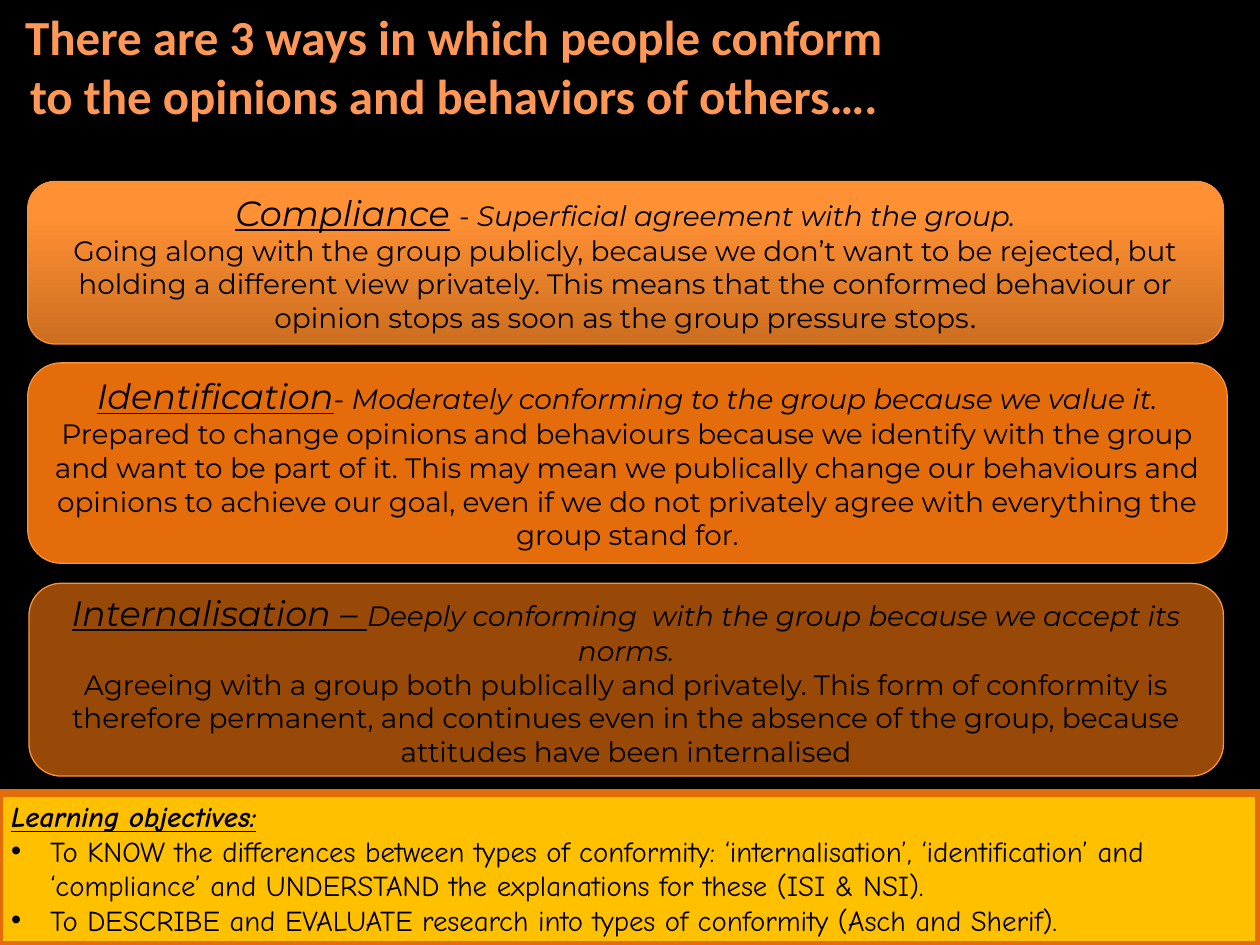
from lxml.etree import SubElement
from pptx import Presentation
from pptx.dml.color import RGBColor
from pptx.enum.shapes import MSO_SHAPE as Shape
from pptx.enum.text import MSO_ANCHOR as Anchor, MSO_AUTO_SIZE as AutoSize, PP_ALIGN as Align
from pptx.oxml.ns import qn
from pptx.util import Inches, Pt

BLACK = RGBColor(0x00, 0x00, 0x00)
TITLE_ORANGE = RGBColor(0xFF, 0x98, 0x56)
EDGE_ORANGE = RGBColor(0xF6, 0x92, 0x40)
LIGHT_ORANGE = RGBColor(0xFF, 0x90, 0x34)
SHADED_ORANGE = RGBColor(0xCC, 0x6E, 0x20)
ORANGE = RGBColor(0xE4, 0x6C, 0x0A)
BROWN = RGBColor(0x98, 0x48, 0x07)
YELLOW = RGBColor(0xFF, 0xC0, 0x00)

CONFORMITY_TYPES = [
    ((0.22, 1.44, 9.49, 1.29), (SHADED_ORANGE, LIGHT_ORANGE),
     [("Compliance", {"size": 20, "italic": True, "underline": True}),
      (" ", {"size": 20}),
      ("- ", {}),
      ("Superficial agreement with the group.", {"italic": True})],
     [("Going along with the group publicly, because we don’t want to be rejected, "
       "but holding a different view privately. This means that the conformed "
       "behaviour or opinion stops as soon as the group pressure stops", {}),
      (".", {"font": "Calibri"})]),
    ((0.22, 2.88, 9.52, 1.59), (ORANGE,),
     [("Identification", {"size": 20, "italic": True, "underline": True}),
      ("- ", {}),
      ("Moderately conforming to the group because we value it.", {"italic": True})],
     [("Prepared to change opinions and behaviours because we identify with the "
       "group and want to be part of it. This may mean we publically change our "
       "behaviours and opinions to achieve our goal, even if we do not privately "
       "agree with everything the group stand for.", {})]),
    ((0.23, 4.63, 9.48, 1.53), (BROWN,),
     [("Internalisation – ", {"size": 20, "italic": True, "underline": True}),
      ("Deeply conforming  with the group because we accept its norms.",
       {"italic": True})],
     [("Agreeing with a group both publically and privately. This form of "
       "conformity is therefore permanent, and continues even in the absence of "
       "the group, because attitudes have been internalised", {})]),
]

OBJECTIVES = [
    "To KNOW the differences between types of conformity: ‘internalisation’, "
    "‘identification’ and ‘compliance’ and UNDERSTAND the explanations for these "
    "(ISI & NSI).",
    "To DESCRIBE and EVALUATE research into types of conformity (Asch and Sherif).",
]


def add_text(paragraph, text, size=16, font="Montserrat", color=BLACK,
             bold=False, italic=False, underline=False):
    run = paragraph.add_run()
    run.text = text
    run.font.size = Pt(size)
    run.font.name = font
    run.font.color.rgb = color
    run.font.bold = bold
    run.font.italic = italic
    run.font.underline = underline


def add_bullet(paragraph, indent):
    properties = paragraph._p.get_or_add_pPr()
    properties.set("marL", str(indent))
    properties.set("indent", str(-indent))
    SubElement(properties, qn("a:buFont")).set("typeface", "Arial")
    SubElement(properties, qn("a:buChar")).set("char", "•")


def add_panel(slide, kind, box, fill_colors, line_color, line_width, anchor):
    shape = slide.shapes.add_shape(kind, *map(Inches, box))
    shape.shadow.inherit = False
    if len(fill_colors) == 1:
        shape.fill.solid()
        shape.fill.fore_color.rgb = fill_colors[0]
    else:
        shape.fill.gradient()
        shape.fill.gradient_angle = 90
        for stop, color, position in zip(shape.fill.gradient_stops, fill_colors, (0, 0.8)):
            stop.color.rgb = color
            stop.position = position
    shape.line.color.rgb = line_color
    shape.line.width = Pt(line_width)
    shape.text_frame.word_wrap = True
    shape.text_frame.vertical_anchor = anchor
    return shape.text_frame


def place_title(slide, box):
    title = slide.shapes.title
    title.left, title.top, title.width, title.height = map(Inches, box)
    frame = title.text_frame
    frame.word_wrap = True
    frame.auto_size = AutoSize.NONE
    frame.vertical_anchor = Anchor.TOP
    paragraph = frame.paragraphs[0]
    paragraph.alignment = Align.CENTER
    add_text(paragraph,
             "There are 3 ways in which people conform to the opinions and "
             "behaviors of others….",
             size=28, font="Calibri", color=TITLE_ORANGE, bold=True)


def add_conformity_type(slide, box, fill_colors, heading, description):
    frame = add_panel(slide, Shape.ROUNDED_RECTANGLE, box, fill_colors,
                      EDGE_ORANGE, 0.75, Anchor.MIDDLE)
    for paragraph, runs in zip((frame.paragraphs[0], frame.add_paragraph()),
                               (heading, description)):
        paragraph.alignment = Align.CENTER
        for text, style in runs:
            add_text(paragraph, text, **style)


def add_objectives(slide, box):
    frame = add_panel(slide, Shape.RECTANGLE, box, (YELLOW,), ORANGE, 4.5, Anchor.TOP)
    heading = frame.paragraphs[0]
    heading.alignment = Align.LEFT
    add_text(heading, "Learning objectives:", size=16.5, font="Comic Neue",
             bold=True, italic=True, underline=True)
    for objective in OBJECTIVES:
        paragraph = frame.add_paragraph()
        paragraph.alignment = Align.LEFT
        add_bullet(paragraph, Inches(0.31))
        add_text(paragraph, objective, size=16.5, font="Comic Neue")


def main():
    presentation = Presentation()
    presentation.slide_width = Inches(10)
    presentation.slide_height = Inches(7.5)
    slide = presentation.slides.add_slide(
        presentation.slide_layouts.get_by_name("Title Only"))
    slide.background.fill.solid()
    slide.background.fill.fore_color.rgb = BLACK
    place_title(slide, (0, 0, 7.2, 1.04))
    for conformity_type in CONFORMITY_TYPES:
        add_conformity_type(slide, *conformity_type)
    add_objectives(slide, (-0.01, 6.29, 10, 1.21))
    presentation.save("out.pptx")


if __name__ == "__main__":
    main()
